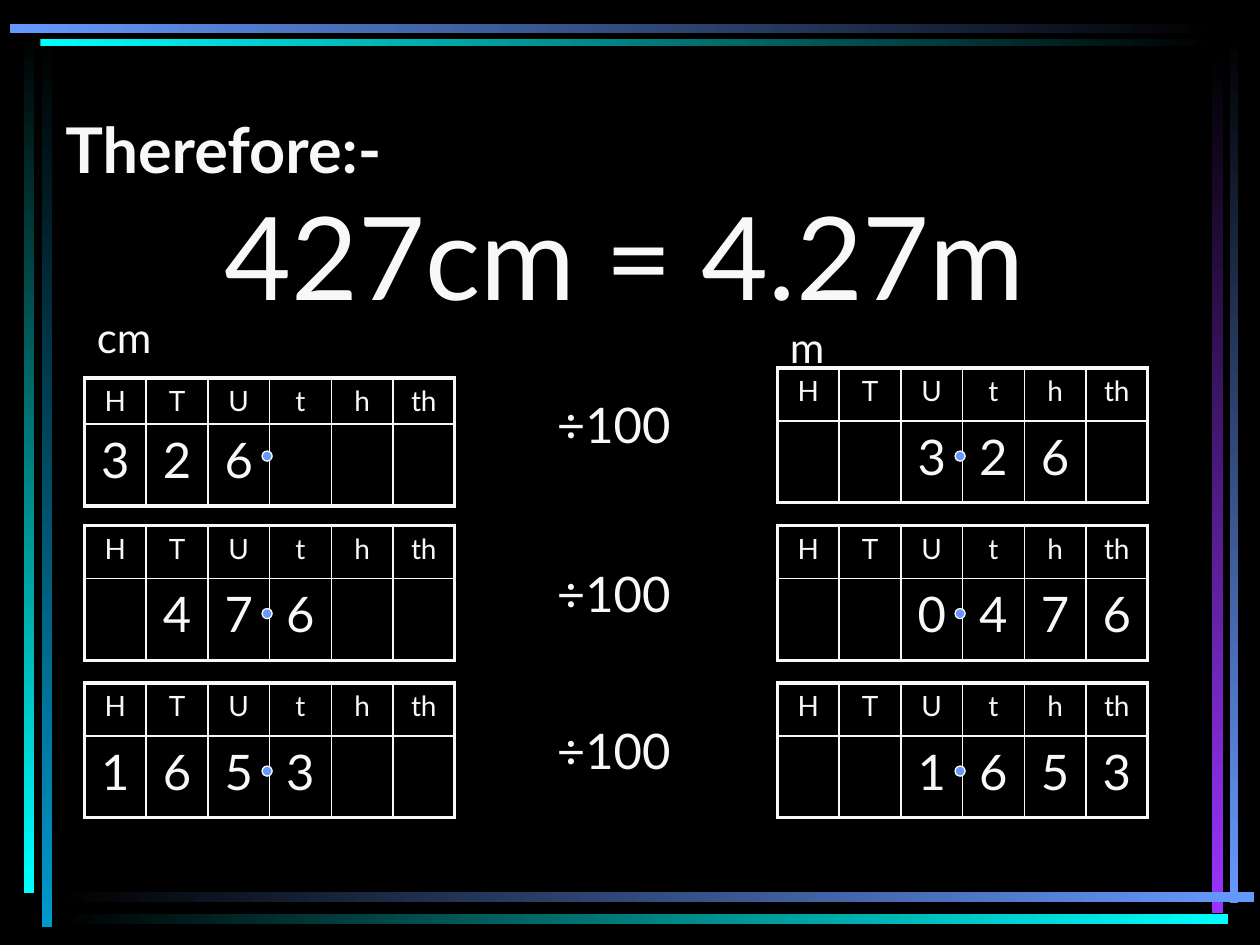
from pptx import Presentation
from pptx.dml.color import RGBColor
from pptx.enum.shapes import MSO_SHAPE
from pptx.enum.text import MSO_AUTO_SIZE, PP_ALIGN
from pptx.oxml.ns import qn
from pptx.util import Inches, Pt
from lxml.etree import SubElement

# Content
WHITE, BLUE, BLACK, CYAN = "F8F8F8", "6699FF", "000000", "00FFFF"
HEADS = ["H", "T", "U", "t", "h", "th"]

# left, top, width, height, first colour, last colour
BARS = [
    (0.33, 0.28, 0.08, 7.08, BLACK, "0099CC"),
    (0.19, 0.25, 0.08, 6.84, BLACK, CYAN),
    (9.76, 0.24, 0.07, 6.93, BLACK, BLUE),
    (9.62, 0.42, 0.09, 6.83, BLACK, "9933FF"),
    (0.45, 7.08, 9.5, 0.08, BLACK, BLUE),
    (0.45, 7.25, 9.3, 0.08, BLACK, CYAN),
    (0.32, 0.31, 9.32, 0.06, CYAN, BLACK),
    (0.08, 0.19, 9.56, 0.07, BLUE, BLACK),
]

# left, top, head row height, digits by column
GRIDS = [
    (0.67, 3.0, 0.33, ["3", "2", "6", "", "", ""]),
    (6.17, 2.92, 0.42, ["", "", "3", "2", "6", ""]),
    (0.67, 4.17, 0.42, ["", "4", "7", "6", "", ""]),
    (6.17, 4.17, 0.42, ["", "", "0", "4", "7", "6"]),
    (0.67, 5.42, 0.42, ["1", "6", "5", "3", "", ""]),
    (6.17, 5.42, 0.42, ["", "", "1", "6", "5", "3"]),
]
COL, ROW = 0.49, 0.65
DOT, DOT_TOP, DOT_GAP = 0.08, 3.58, 1.25

# text, left, top, width, height, alignment, font values
LEFT, MID = PP_ALIGN.LEFT, PP_ALIGN.CENTER
TEXTS = [
    ("Therefore:-", 0.42, 0.83, 8.25, 0.7, LEFT, {"size": Pt(36), "bold": True}),
    ("427cm = 4.27m", 0.42, 1.42, 9.08, 1.2, MID, {"size": Pt(66)}),
    ("cm", 0.67, 2.42, 1.25, 0.5, LEFT, {"size": Pt(24)}),
    ("m", 6.17, 2.5, 1.25, 0.5, LEFT, {"size": Pt(24)}),
] + [("÷100", 3.83, top, 2.08, 0.57, MID, {"size": Pt(28)})
     for top in (3.08, 4.42, 5.67)]


def color(code):
    return RGBColor.from_string(code)


def write(frame, text, align, style):
    para = frame.paragraphs[0]
    para.alignment = align
    run = para.add_run()
    run.text = text
    for key, val in {"name": "Lato", **style}.items():
        setattr(run.font, key, val)
    run.font.color.rgb = color(WHITE)


def add_bar(slide, x, y, w, h, first, last):
    bar = slide.shapes.add_shape(
        MSO_SHAPE.RECTANGLE, Inches(x), Inches(y), Inches(w), Inches(h))
    bar.shadow.inherit = False
    bar.line.fill.background()
    bar.fill.gradient()
    bar.fill.gradient_angle = 270 if h > w else 0
    for stop, code in zip(bar.fill.gradient_stops, (first, last)):
        stop.color.rgb = color(code)


def add_text(slide, text, x, y, w, h, align, style):
    box = slide.shapes.add_textbox(Inches(x), Inches(y), Inches(w), Inches(h))
    frame = box.text_frame
    frame.word_wrap = True
    frame.auto_size = MSO_AUTO_SIZE.SHAPE_TO_FIT_TEXT
    write(frame, text, align, style)


def set_edges(cell, outer):
    # Border lines must come before the fill in the cell properties
    props = cell._tc.get_or_add_tcPr()
    for side in "LRTB":
        width = Pt(2.25 if side in outer else 1)
        line = SubElement(props, qn(f"a:ln{side}"), w=str(int(width)))
        fill = SubElement(line, qn("a:solidFill"))
        SubElement(fill, qn("a:srgbClr"), val=WHITE)
    cell.fill.background()


def add_grid(slide, x, y, head, digits):
    count = len(HEADS)
    table = slide.shapes.add_table(
        2, count, Inches(x), Inches(y),
        Inches(COL * count), Inches(head + ROW)).table
    table.first_row = table.horz_banding = False
    for col in table.columns:
        col.width = Inches(COL)
    rows = [(HEADS, head, 16, "T"), (digits, ROW, 28, "B")]
    for r, (words, high, size, edge) in enumerate(rows):
        table.rows[r].height = Inches(high)
        for c, word in enumerate(words):
            cell = table.cell(r, c)
            outer = edge + ("L" if c == 0 else "R" if c == count - 1 else "")
            set_edges(cell, outer)
            if word:
                write(cell.text_frame, word, MID, {"size": Pt(size)})


def add_dot(slide, x, y):
    dot = slide.shapes.add_shape(
        MSO_SHAPE.OVAL, Inches(x), Inches(y), Inches(DOT), Inches(DOT))
    dot.shadow.inherit = False
    dot.fill.solid()
    dot.fill.fore_color.rgb = color(BLUE)
    dot.line.color.rgb = color(WHITE)
    dot.line.width = Pt(0.75)


def main():
    deck = Presentation()
    deck.slide_width, deck.slide_height = Inches(10), Inches(7.5)
    slide = deck.slides.add_slide(deck.slide_layouts[6])
    slide.background.fill.solid()
    slide.background.fill.fore_color.rgb = color(BLACK)

    # Frame of fading bars
    for bar in BARS:
        add_bar(slide, *bar)

    # Place value grids, each with a decimal point after the units
    for i, (x, y, head, digits) in enumerate(GRIDS):
        add_grid(slide, x, y, head, digits)
        add_dot(slide, x + 3 * COL - 0.06, DOT_TOP + i // 2 * DOT_GAP)

    # Title, sum and labels
    for item in TEXTS:
        add_text(slide, *item)

    deck.save("out.pptx")


if __name__ == "__main__":
    main()
